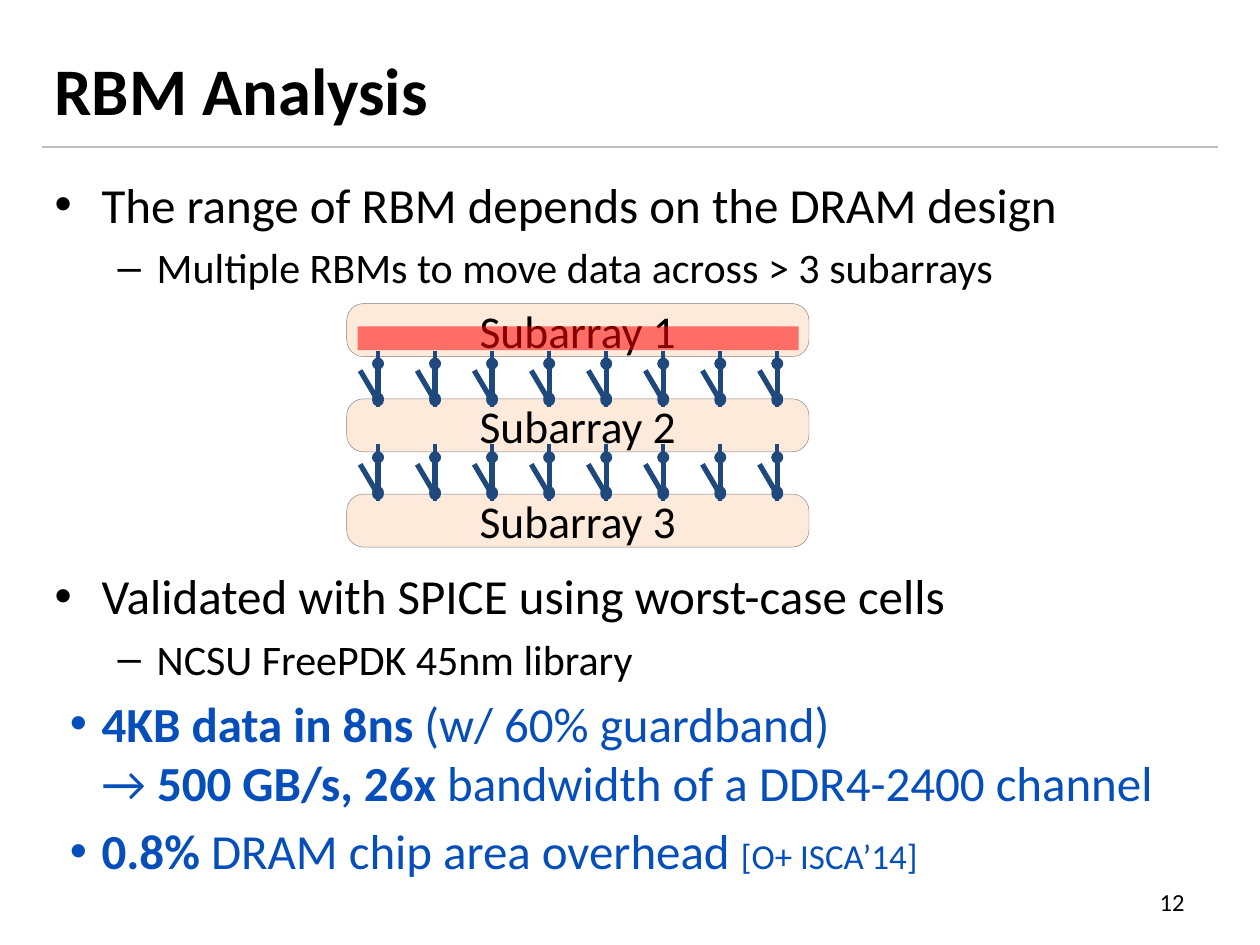
from pptx import Presentation
from pptx.dml.color import RGBColor as Rgb
from pptx.enum.shapes import MSO_CONNECTOR as Link, MSO_SHAPE as Form
from pptx.enum.text import MSO_ANCHOR as Anchor, PP_ALIGN as Align
from pptx.oxml.xmlchemy import OxmlElement as Node
from pptx.util import Cm, Pt

HUES = {
    "ink": "000000",
    "blue": "064FBA",
    "navy": "1F497D",
    "peach": "FDEADA",
    "gray": "808080",
    "rule": "BFBFBF",
    "red": "FF0000",
}

# Bullet levels: left margin, indent, sign
LEVELS = {
    "main": (0.95, -0.95, "•"),
    "sub": (2.06, -0.79, "–"),
    "key": (0.95, -0.64, "•"),
}


def hue(name):
    return Rgb.from_string(HUES[name])


def child(parent, tag, **attrs):
    node = Node(tag)
    for key, val in attrs.items():
        node.set(key, str(val))
    parent.append(node)
    return node


class Painter:
    face = "Calibri"

    def __init__(self, slide):
        self.slide = slide
        self.shapes = slide.shapes

    def run(self, para, text, size, color="ink", bold=False):
        run = para.add_run()
        run.text = text
        form = {"name": self.face, "size": Pt(size), "bold": bold}
        for key, val in form.items():
            setattr(run.font, key, val)
        run.font.color.rgb = hue(color)

    def frame(self, left, top, width, height, anchor=Anchor.TOP):
        box = self.shapes.add_textbox(Cm(left), Cm(top), Cm(width), Cm(height))
        frame = box.text_frame
        form = {"word_wrap": True, "vertical_anchor": anchor}
        for key, val in form.items():
            setattr(frame, key, val)
        return frame

    def label(self, text, place, size, bold=False, align=Align.LEFT):
        para = self.frame(*place, anchor=Anchor.MIDDLE).paragraphs[0]
        para.alignment = align
        self.run(para, text, size, bold=bold)

    def bullet(self, para, level, gap, runs):
        margin, indent, sign = LEVELS[level]
        para.space_before = Pt(gap)
        props = para._p.get_or_add_pPr()
        props.set("marL", str(Cm(margin)))
        props.set("indent", str(Cm(indent)))
        child(props, "a:buFont", typeface="Arial")
        child(props, "a:buChar", char=sign)
        for text, size, color, bold in runs:
            for num, part in enumerate(text.split("\n")):
                if num:
                    para.add_line_break()
                self.run(para, part, size, color, bold)

    def block(self, form, place, fill, edge=None, alpha=None):
        shape = self.shapes.add_shape(form, *map(Cm, place))
        shape.shadow.inherit = False
        shape.fill.solid()
        shape.fill.fore_color.rgb = hue(fill)
        if alpha:
            tint = shape.fill._xPr.find(".//{*}srgbClr")
            child(tint, "a:alpha", val=alpha * 1000)
        if edge:
            shape.line.color.rgb = hue(edge)
            shape.line.width = Pt(0.25)
        else:
            shape.line.fill.background()
        return shape

    def array(self, text, place):
        shape = self.block(Form.ROUNDED_RECTANGLE, place, "peach", "gray")
        shape.adjustments[0] = 0.32
        frame = shape.text_frame
        form = {"margin_top": 0, "margin_bottom": 0, "vertical_anchor": Anchor.MIDDLE}
        for key, val in form.items():
            setattr(frame, key, val)
        para = frame.paragraphs[0]
        para.alignment = Align.CENTER
        self.run(para, text, 26)

    def line(self, start, end, color, width, dot=False):
        link = self.shapes.add_connector(Link.STRAIGHT, *map(Cm, (*start, *end)))
        link.line.color.rgb = hue(color)
        link.line.width = Pt(width)
        if dot:
            child(link.line._get_or_add_ln(), "a:tailEnd", type="oval")
        child(link._element.spPr, "a:effectLst")

    def switch(self, left, top, tips, arm):
        """Two dotted ends plus the arm, which is upright or tilted."""
        for start, end in tips:
            self.line((left, top + start), (left, top + end), "navy", 2.25, True)
        start, end, lean = arm
        self.line((left, top + start), (left + lean, top + end), "navy", 3)


def main():
    deck = Presentation()
    deck.slide_width, deck.slide_height = Cm(25.4), Cm(19.05)
    pen = Painter(deck.slides.add_slide(deck.slide_layouts[6]))

    # Heading and rule
    pen.line((0.85, 2.96), (24.55, 2.96), "rule", 1.5)
    pen.label("RBM Analysis", (0.85, 0.21, 23.7, 3.18), 38, bold=True)

    # Bullets; the wide gap leaves room for the diagram
    items = [
        ("main", 5.6, [("The range of RBM depends on the DRAM design", 28, "ink", False)]),
        ("sub", 4.8, [("Multiple RBMs to move data across > 3 subarrays", 24, "ink", False)]),
        ("main", 156.5, [("Validated with SPICE using worst-case cells", 28, "ink", False)]),
        ("sub", 4.8, [("NCSU FreePDK 45nm library", 24, "ink", False)]),
        ("key", 5.6, [
            ("4KB data in 8ns ", 28, "blue", True),
            ("(w/ 60% guardband)\n→ ", 28, "blue", False),
            ("500 GB/s, 26x ", 28, "blue", True),
            ("bandwidth of a DDR4-2400 channel", 28, "blue", False),
        ]),
        ("key", 5.6, [
            ("0.8% ", 28, "blue", True),
            ("DRAM chip area overhead ", 28, "blue", False),
            ("[O+ ISCA’14]", 20, "blue", False),
        ]),
    ]
    body = pen.frame(0.85, 3.39, 23.7, 14.82)
    for num, item in enumerate(items):
        para = body.add_paragraph() if num else body.paragraphs[0]
        pen.bullet(para, *item)

    # Page number
    pen.label("12", (18.2, 17.66, 5.93, 1.02), 14, align=Align.RIGHT)

    # Subarrays
    for num in range(3):
        pen.array(f"Subarray {num + 1}", (6.99, 6.12 + 1.92 * num, 9.32, 1.07))

    # Closed switches, row buffer, open switches
    spots = [(7.62 + 1.15 * col, 7.07 + 1.89 * row)
             for row in range(2) for col in range(8)]
    for left, top in spots:
        pen.switch(left, top, [(0.02, 0.26), (1.08, 0.96)], (0.23, 0.87, 0))
    pen.block(Form.RECTANGLE, (7.21, 6.58, 8.89, 0.48), "red", alpha=49 + 4)
    for left, top in spots:
        pen.switch(left, top, [(0, 0.26), (1.13, 1)], (1.01, 0.4, -0.36))

    deck.save("out.pptx")


if __name__ == "__main__":
    main()
